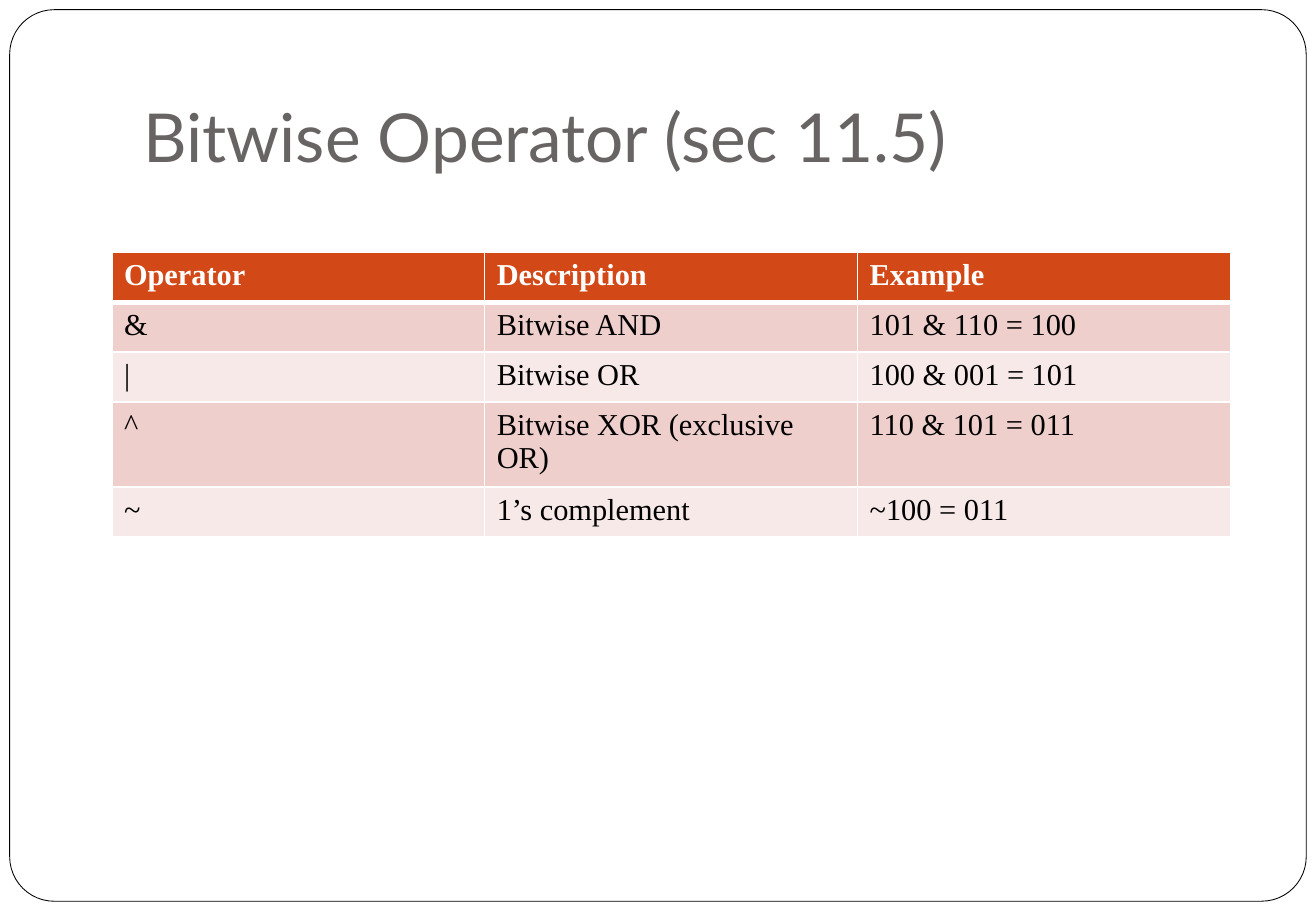
"""Build a slide with a table of bitwise operators."""
import dataclasses

import lxml.etree
import pptx
import pptx.dml.color
import pptx.enum.shapes
import pptx.enum.text
import pptx.oxml.ns
import pptx.util

TITLE = "Bitwise Operator (sec 11.5)"
OPERATORS = [
    ("Operator", "Description", "Example"),
    ("&", "Bitwise AND", "101 & 110 = 100"),
    ("|", "Bitwise OR", "100 & 001 = 101"),
    ("^", "Bitwise XOR (exclusive OR)", "110 & 101 = 011"),
    ("~", "1’s complement", "~100 = 011"),
]


@dataclasses.dataclass(frozen=True)
class Theme:
    title_font: str = "Lato"
    table_font: str = "Times New Roman"
    title_size: int = 40
    table_size: int = 18
    title: str = "696464"
    ink: str = "000000"
    paper: str = "FFFFFF"
    header: str = "D34817"
    bands: tuple = ("F7E9E8", "EFCFCC")


THEME = Theme()
INCH = pptx.util.Inches
WIDTH, HEIGHT = 10.83, 7.5
MARGIN = 0.08
CONTENT_WIDTH = 0.85 * WIDTH
COLUMN_WIDTH = CONTENT_WIDTH / len(OPERATORS[0])
ROW_HEIGHT = 0.41


def color(code):
    return pptx.dml.color.RGBColor.from_string(code)


def paint(target, code):
    target.solid()
    target.fore_color.rgb = color(code)


def style(para, name, size, code, bold=False):
    font = para.font
    font.name, font.size, font.bold = name, pptx.util.Pt(size), bold
    font.color.rgb = color(code)


def add_frame(page):
    frame = page.shapes.add_shape(
        pptx.enum.shapes.MSO_SHAPE.ROUNDED_RECTANGLE, INCH(MARGIN), INCH(MARGIN),
        INCH(WIDTH - 2 * MARGIN), INCH(HEIGHT - 2 * MARGIN))
    frame.adjustments[0] = 0.05
    frame.shadow.inherit = False
    paint(frame.fill, THEME.paper)
    paint(frame.line.fill, THEME.ink)
    frame.line.width = pptx.util.Pt(0.5)


def add_title(page):
    box = page.shapes.add_textbox(
        INCH(0.1 * WIDTH), INCH(0.04 * HEIGHT), INCH(CONTENT_WIDTH), INCH(1.25))
    text = box.text_frame
    text.word_wrap = True
    text.vertical_anchor = pptx.enum.text.MSO_ANCHOR.BOTTOM
    text.margin_bottom = INCH(0.1)
    text.text = TITLE
    style(text.paragraphs[0], THEME.title_font, THEME.title_size, THEME.title)


def add_borders(cell, bottom_width):
    properties = cell._tc.get_or_add_tcPr()
    name = pptx.oxml.ns.qn
    for side, width in (("L", 1), ("R", 1), ("T", 1), ("B", bottom_width)):
        border = lxml.etree.SubElement(
            properties, name(f"a:ln{side}"), w=str(pptx.util.Pt(width)))
        fill = lxml.etree.SubElement(border, name("a:solidFill"))
        lxml.etree.SubElement(fill, name("a:srgbClr"), val=THEME.paper)


def add_operators(page):
    table = page.shapes.add_table(
        len(OPERATORS), len(OPERATORS[0]), INCH(0.085 * WIDTH), INCH(2.08),
        INCH(CONTENT_WIDTH), INCH(ROW_HEIGHT * len(OPERATORS))).table
    for column in table.columns:
        column.width = INCH(COLUMN_WIDTH)
    for index, values in enumerate(OPERATORS):
        table.rows[index].height = INCH(ROW_HEIGHT)
        heading = index == 0
        for cell, value in zip(table.rows[index].cells, values):
            cell.text = value
            style(cell.text_frame.paragraphs[0], THEME.table_font, THEME.table_size,
                  THEME.paper if heading else THEME.ink, heading)
            add_borders(cell, 3 if heading else 1)
            paint(cell.fill, THEME.header if heading else THEME.bands[index % 2])


def main():
    deck = pptx.Presentation()
    deck.slide_width, deck.slide_height = INCH(WIDTH), INCH(HEIGHT)
    page = deck.slides.add_slide(deck.slide_layouts[6])
    paint(page.background.fill, THEME.paper)
    add_frame(page)
    add_title(page)
    add_operators(page)
    deck.save("out.pptx")


if __name__ == "__main__":
    main()
